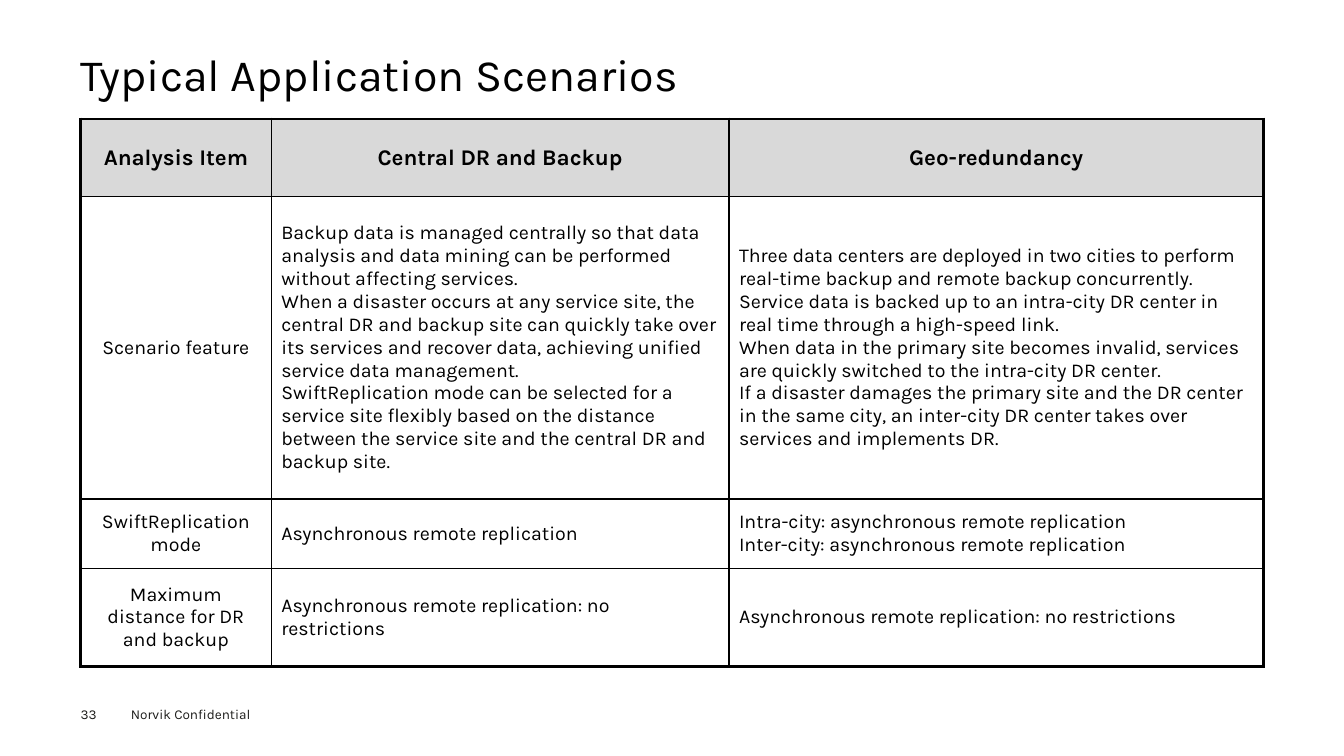
"""Build the slide that compares two disaster recovery scenarios in a table."""
import pptx
import pptx.dml.color
import pptx.enum.text
import pptx.oxml
import pptx.oxml.ns
import pptx.util

PX = 9144
COLORS = {"black": "000000", "footer": "1D1D1B", "header": "D9D9D9", "white": "FFFFFF"}
ANCHOR = pptx.enum.text.MSO_ANCHOR
ALIGN = pptx.enum.text.PP_ALIGN

COLUMN_WIDTHS = [189, 454, 530]
ROW_HEIGHTS = [77, 300, 69, 97]
SCENARIOS = [
    ["Analysis Item", "Central DR and Backup", "Geo-redundancy"],
    [
        "Scenario feature",
        "Backup data is managed centrally so that data analysis and data mining can be "
        "performed without affecting services.\n"
        "When a disaster occurs at any service site, the central DR and backup site can quickly "
        "take over its services and recover data, achieving unified service data management.\n"
        "SwiftReplication mode can be selected for a service site flexibly based on the distance "
        "between the service site and the central DR and backup site.",
        "Three data centers are deployed in two cities to perform real-time backup and remote "
        "backup concurrently.\n"
        "Service data is backed up to an intra-city DR center in real time through a "
        "high-speed link.\n"
        "When data in the primary site becomes invalid, services are quickly switched to the "
        "intra-city DR center.\n"
        "If a disaster damages the primary site and the DR center in the same city, an inter-city "
        "DR center takes over services and implements DR.",
    ],
    [
        "SwiftReplication mode",
        "Asynchronous remote replication",
        "Intra-city: asynchronous remote replication\n"
        "Inter-city: asynchronous remote replication",
    ],
    [
        "Maximum distance for DR and backup",
        "Asynchronous remote replication: no restrictions",
        "Asynchronous remote replication: no restrictions",
    ],
]


class SlideBuilder:
    """Hold the style and the current slide, and add its elements."""

    font = "Karla"
    outer_line = 2.25
    inner_line = 1

    def __init__(self, deck):
        self.page = deck.slides.add_slide(deck.slide_layouts[5])

    def color(self, name):
        return pptx.dml.color.RGBColor.from_string(COLORS[name])

    def format_text(self, frame, size, color="black", bold=False, align=ALIGN.LEFT):
        for para in frame.paragraphs:
            para.alignment = align
            for span in para.runs:
                span.font.name = self.font
                span.font.size = pptx.util.Pt(size)
                span.font.bold = bold
                span.font.color.rgb = self.color(color)

    def clear_margins(self, frame):
        frame.margin_left = frame.margin_top = 0
        frame.margin_right = frame.margin_bottom = 0

    def title(self, text, left, top, width, height):
        box = self.page.shapes.title
        box.left, box.top, box.width, box.height = (
            value * PX for value in (left, top, width, height))
        frame = box.text_frame
        frame.text = text
        frame.auto_size = pptx.enum.text.MSO_AUTO_SIZE.NONE
        frame.vertical_anchor = ANCHOR.MIDDLE
        self.clear_margins(frame)
        frame.paragraphs[0].line_spacing = 0.9
        self.format_text(frame, 32)

    def label(self, text, left, top, width, height, inset=True):
        box = self.page.shapes.add_textbox(left * PX, top * PX, width * PX, height * PX)
        frame = box.text_frame
        frame.word_wrap = True
        frame.text = text
        if not inset:
            self.clear_margins(frame)
        self.format_text(frame, 9.7, "footer")

    def borders(self, cell, outer_sides):
        properties = cell._tc.get_or_add_tcPr()
        for index, side in enumerate("LRTB"):
            points = self.outer_line if side in outer_sides else self.inner_line
            line = pptx.oxml.parse_xml(
                f'<a:ln{side} {pptx.oxml.ns.nsdecls("a")} w="{pptx.util.Pt(points)}">'
                f'<a:solidFill><a:srgbClr val="{COLORS["black"]}"/></a:solidFill></a:ln{side}>')
            properties.insert(index, line)

    def table(self, rows, left, top, widths, heights):
        grid = self.page.shapes.add_table(
            len(rows), len(widths), left * PX, top * PX,
            sum(widths) * PX, sum(heights) * PX).table
        grid.first_row = grid.horz_banding = False
        for column, width in zip(grid.columns, widths):
            column.width = width * PX
        for row, height in zip(grid.rows, heights):
            row.height = height * PX
        last_row, last_column = len(rows) - 1, len(widths) - 1
        for r, texts in enumerate(rows):
            for c, text in enumerate(texts):
                cell = grid.cell(r, c)
                header = r == 0
                cell.text_frame.text = text
                cell.vertical_anchor = ANCHOR.MIDDLE
                cell.fill.solid()
                cell.fill.fore_color.rgb = self.color("header" if header else "white")
                align = ALIGN.CENTER if header or c == 0 else ALIGN.LEFT
                self.format_text(cell.text_frame, 16 if header else 14, bold=header, align=align)
                edges = {"L": c == 0, "R": c == last_column, "T": header, "B": r == last_row}
                self.borders(cell, [side for side, outer in edges.items() if outer])


def main():
    deck = pptx.Presentation()
    deck.slide_width, deck.slide_height = 1333 * PX, 750 * PX
    builder = SlideBuilder(deck)
    builder.title("Typical Application Scenarios", 80, 49, 1173, 54)
    builder.table(SCENARIOS, 80, 118, COLUMN_WIDTHS, ROW_HEIGHTS)
    builder.label("33", 80, 700, 55, 16, inset=False)
    builder.label("Norvik Confidential", 120, 695, 160, 27)
    deck.save("out.pptx")


if __name__ == "__main__":
    main()
